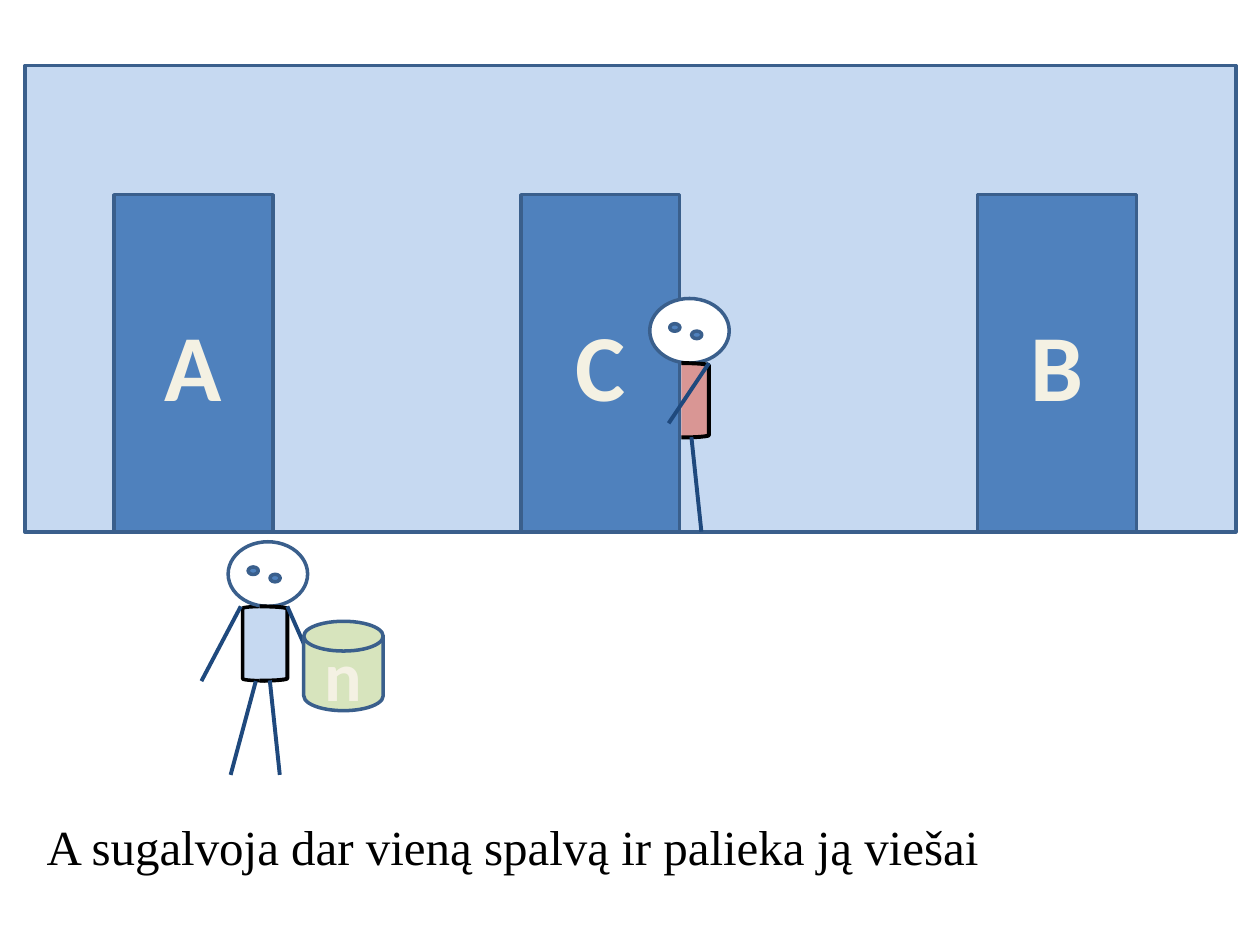
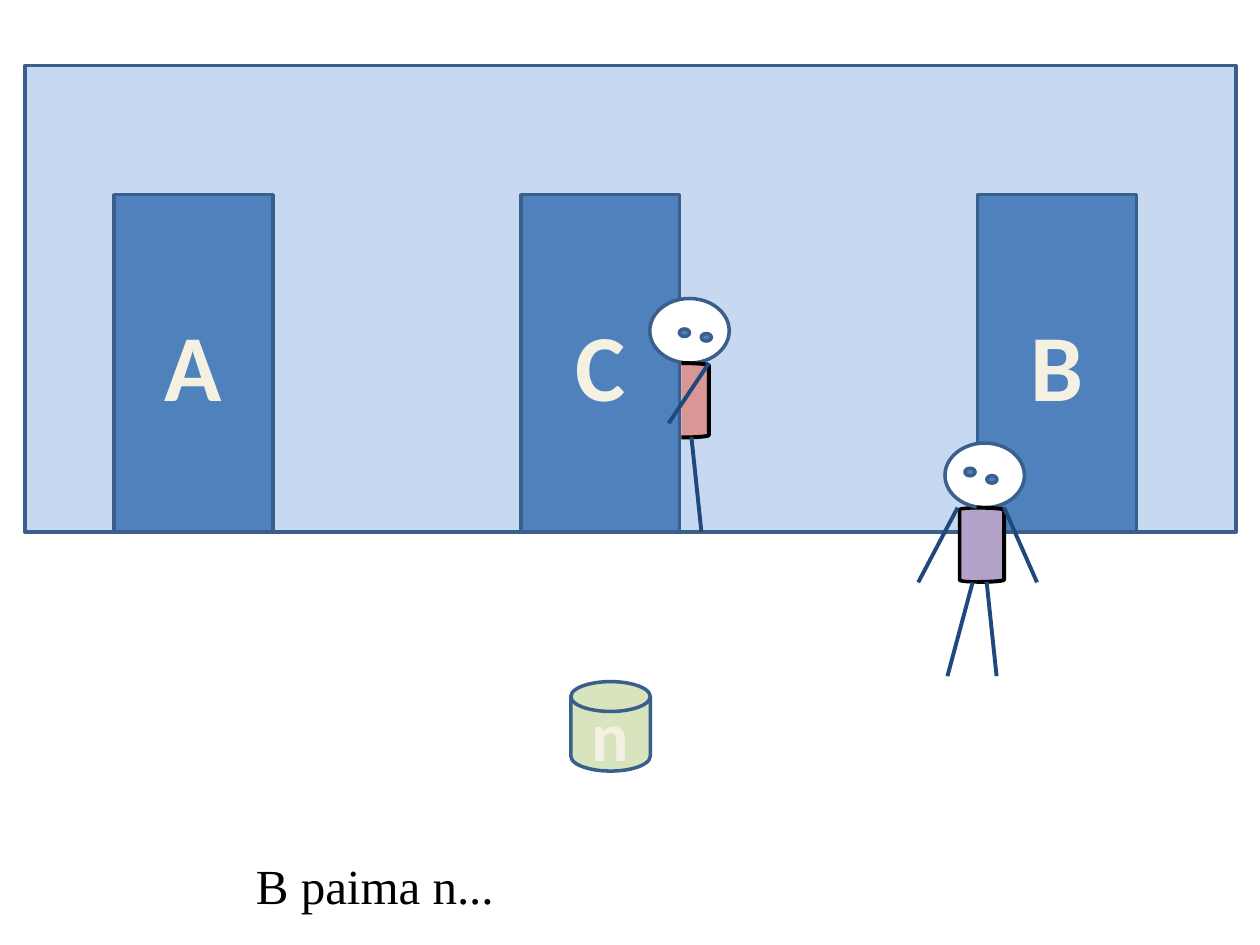
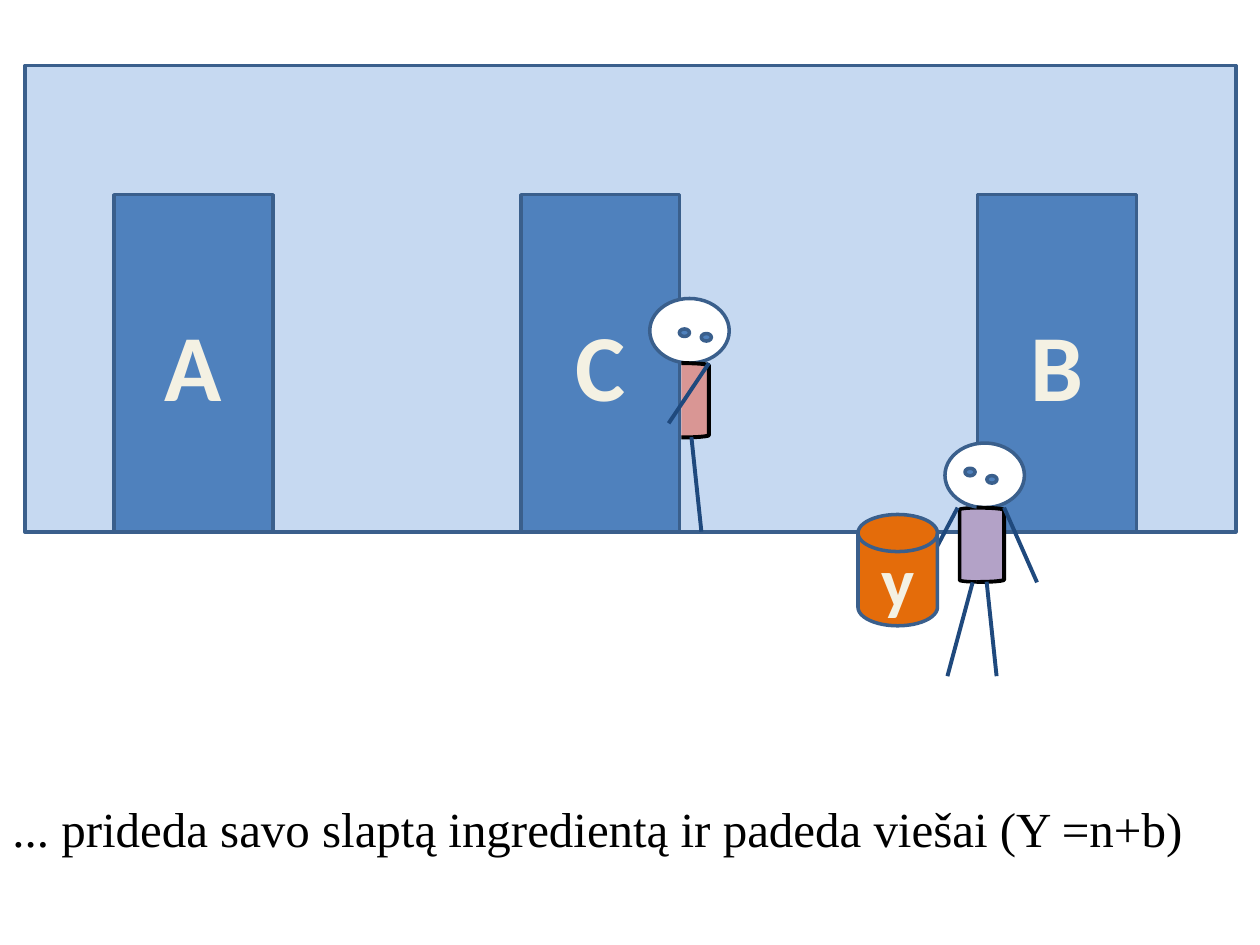
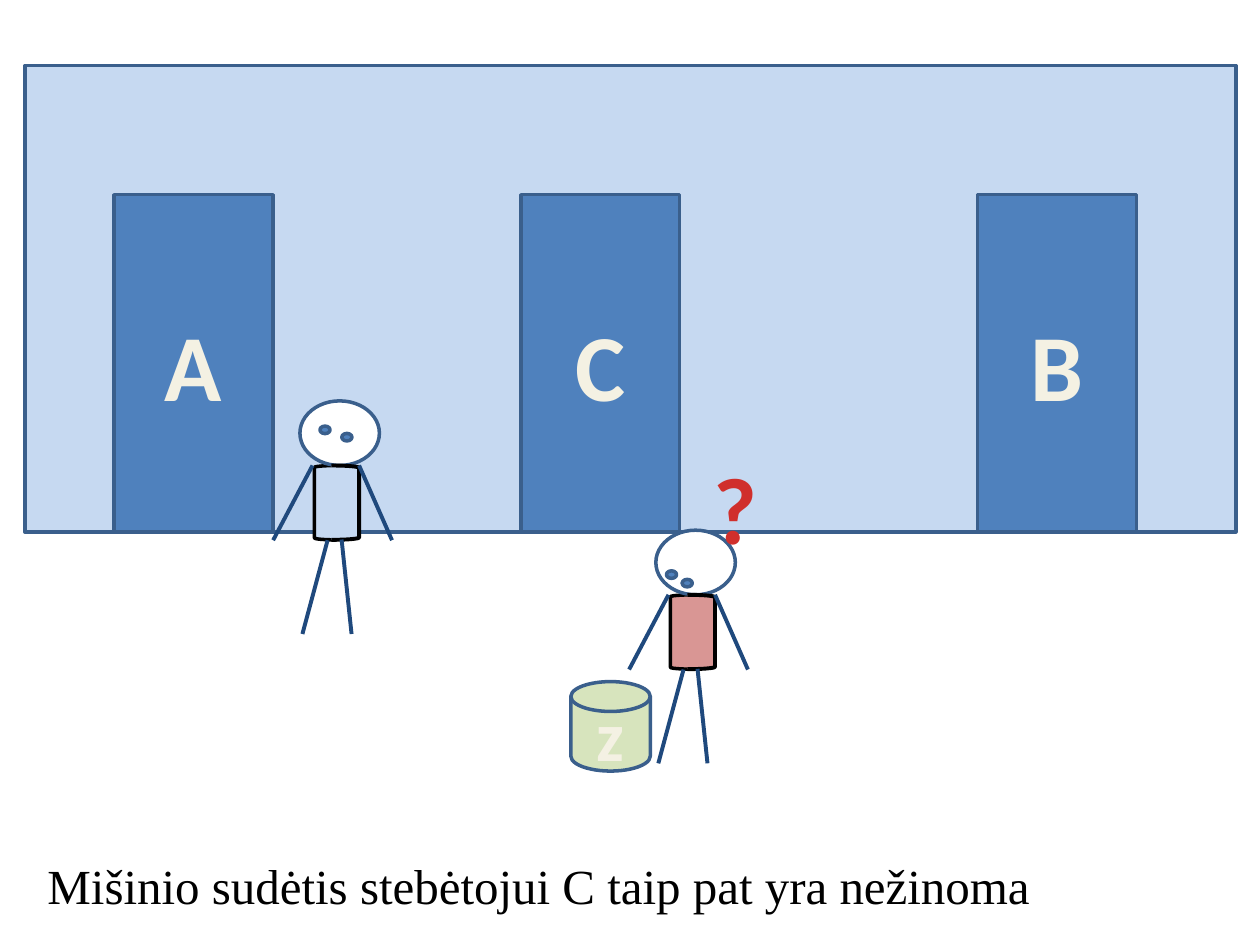
from dataclasses import dataclass

from lxml import etree
from pptx import Presentation
from pptx.dml.color import RGBColor
from pptx.enum.shapes import MSO_CONNECTOR, MSO_SHAPE
from pptx.enum.text import MSO_ANCHOR, MSO_AUTO_SIZE, PP_ALIGN
from pptx.oxml.ns import qn
from pptx.util import Pt

RECTANGLE = MSO_SHAPE.RECTANGLE
OVAL = MSO_SHAPE.OVAL
LEFT_BRACKET = MSO_SHAPE.LEFT_BRACKET
RIGHT_BRACKET = MSO_SHAPE.RIGHT_BRACKET
DISK = MSO_SHAPE.FLOWCHART_MAGNETIC_DISK
STRAIGHT = MSO_CONNECTOR.STRAIGHT
CENTER = PP_ALIGN.CENTER
LEFT = PP_ALIGN.LEFT
MIDDLE = MSO_ANCHOR.MIDDLE
FIT_SHAPE = MSO_AUTO_SIZE.SHAPE_TO_FIT_TEXT
BLANK_LAYOUT = 6


@dataclass(frozen=True)
class Theme:
    wall: str = "C6D9F1"
    door: str = "4F81BD"
    edge: str = "3A5F8C"
    limb: str = "1F497D"
    head: str = "FFFFFF"
    ink: str = "000000"
    label: str = "F4F1E3"
    label_outline: str = "054697"
    person_a: str = "C6D9F1"
    person_b: str = "B3A2C7"
    person_c: str = "D99694"
    green_paint: str = "D7E4BD"
    orange_paint: str = "E46C0A"
    question_stops: tuple = ((0, "FC7C7A"), (75, "D02F2C"), (100, "C70500"))
    label_font: str = "Calibri"
    caption_font: str = "Times New Roman"
    door_size: float = 54
    paint_size: float = 40
    caption_size: float = 28
    edge_width: float = 2
    limb_width: float = 2.25


# Door left edges, in drawing order
DOORS = {"A": 65.2, "B": 558.6, "C": 297.6}

# Places of body parts, measured from the top left of the head
HEAD_SIZE = (45.4, 36.9)
EYE_SIZE = (5.8, 4.3)
LEFT_SIDE = (8.3, 36.9, 13, 42.5)
RIGHT_SIDE = (18, 36.9, 15.8, 42.5)
RIGHT_LEG = (23.8, 79.2, 29.5, 133.2)
LEFT_LEG = (15.8, 79.6, 1.4, 133.2)
RIGHT_ARM = (33.8, 36.9, 52.6, 79.6)
LEFT_ARM = (7.2, 36.9, -15.3, 79.6)
PEEKING_ARM = (33.8, 36.9, 10.8, 71.3)
WHOLE_LIMBS = (RIGHT_LEG, RIGHT_ARM, LEFT_LEG, LEFT_ARM)
PEEKING_LIMBS = (RIGHT_LEG, PEEKING_ARM)

EYES_LEFT = ((11.4, 14.4), (23.9, 18.6))
EYES_RIGHT = ((16.9, 17.4), (29.4, 20))
EYES_DOWN = ((6, 23.2), (15, 28.1))

PEEKING_C = (371.3, 170.6)
B_AT_DOOR = (540, 253.2)
PUBLIC_PLACE = (326.2, 389.5)


def color(value):
    return RGBColor.from_string(value)


def add_solid_fill(parent, value):
    fill = etree.SubElement(parent, qn("a:solidFill"))
    etree.SubElement(fill, qn("a:srgbClr"), val=value)


class Scene:
    def __init__(self, presentation, theme):
        self.presentation = presentation
        self.theme = theme
        self.slide = None

    def start(self):
        """Open a new slide with the wall and its three doors."""
        layout = self.presentation.slide_layouts[BLANK_LAYOUT]
        self.slide = self.presentation.slides.add_slide(layout)
        self.shape(RECTANGLE, (14.2, 37.5, 692, 266.5), self.theme.wall)
        for letter, left in DOORS.items():
            door = self.shape(RECTANGLE, (left, 111.3, 90.8, 192.8), self.theme.door)
            self.label(door, letter, self.theme.door_size)

    def shape(self, kind, box, fill, line=None, width=None, parent=None):
        shapes = (parent or self.slide).shapes
        shape = shapes.add_shape(kind, *map(Pt, box))
        shape.shadow.inherit = False
        shape.fill.solid()
        shape.fill.fore_color.rgb = color(fill)
        shape.line.color.rgb = color(line or self.theme.edge)
        shape.line.width = Pt(width or self.theme.edge_width)
        return shape

    def set_text(self, shape, text, font_name, size, value, bold=False, align=LEFT):
        paragraph = shape.text_frame.paragraphs[0]
        paragraph.alignment = align
        font = paragraph.font
        font.name, font.size, font.bold = font_name, Pt(size), bold
        if value:
            font.color.rgb = color(value)
        run = paragraph.add_run()
        run.text = text
        return run

    def label(self, shape, text, size):
        """Put a bold, outlined letter in the middle of a shape."""
        theme = self.theme
        shape.text_frame.vertical_anchor = MIDDLE
        run = self.set_text(shape, text, theme.label_font, size, theme.label, True, CENTER)
        outline = etree.SubElement(run._r.get_or_add_rPr(), qn("a:ln"), w=str(Pt(1)))
        add_solid_fill(outline, theme.label_outline)

    def limb(self, parent, start, end):
        connector = parent.shapes.add_connector(STRAIGHT, *map(Pt, start + end))
        connector.line.color.rgb = color(self.theme.limb)
        connector.line.width = Pt(self.theme.limb_width)
        etree.SubElement(connector._element.spPr, qn("a:effectLst"))

    def person(self, place, fill, eyes=EYES_LEFT, peeking=False):
        """Draw a figure; a peeking one shows only its right side."""
        theme = self.theme
        left, top = place
        group = self.slide.shapes.add_group_shape()

        def part(kind, x, y, width, height, *style):
            self.shape(kind, (left + x, top + y, width, height), *style, parent=group)

        if not peeking:
            part(LEFT_BRACKET, *LEFT_SIDE, fill, theme.ink, theme.edge_width)
        part(OVAL, 0, 0, *HEAD_SIZE, theme.head)
        for eye in eyes:
            part(OVAL, *eye, *EYE_SIZE, theme.door)
        part(RIGHT_BRACKET, *RIGHT_SIDE, fill, theme.ink, theme.limb_width)
        for x1, y1, x2, y2 in PEEKING_LIMBS if peeking else WHOLE_LIMBS:
            self.limb(group, (left + x1, top + y1), (left + x2, top + y2))

    def paint(self, place, letter, fill, height=51.1):
        can = self.shape(DISK, (*place, 45.4, height), fill)
        self.label(can, letter, self.theme.paint_size)

    def text_box(self, box, wrap=True):
        text_box = self.slide.shapes.add_textbox(*map(Pt, box))
        text_box.text_frame.word_wrap = wrap
        text_box.text_frame.auto_size = FIT_SHAPE
        return text_box

    def caption(self, text, left, top, width):
        theme = self.theme
        self.set_text(self.text_box((left, top, width, 41.2)), text,
                      theme.caption_font, theme.caption_size, theme.ink)

    def question_mark(self, left, top):
        theme = self.theme
        text_box = self.text_box((left, top, 39.6, 72.7), wrap=False)
        run = self.set_text(text_box, "?", theme.label_font, theme.door_size,
                            None, True, CENTER)
        gradient = etree.SubElement(run._r.get_or_add_rPr(), qn("a:gradFill"))
        stops = etree.SubElement(gradient, qn("a:gsLst"))
        for percent, value in theme.question_stops:
            stop = etree.SubElement(stops, qn("a:gs"), pos=str(percent * 1000))
            etree.SubElement(stop, qn("a:srgbClr"), val=value)
        etree.SubElement(gradient, qn("a:lin"), ang=str(90 * 60000))


def main():
    presentation = Presentation()
    presentation.slide_width, presentation.slide_height = Pt(720), Pt(540)
    theme = Theme()
    scene = Scene(presentation, theme)

    scene.start()
    scene.person(PEEKING_C, theme.person_c, peeking=True)
    scene.person((130.4, 309.6), theme.person_a)
    scene.paint((173.6, 355), "n", theme.green_paint)
    scene.caption("A sugalvoja dar vieną spalvą ir palieka ją viešai", 19.6, 463, 680.4)

    scene.start()
    scene.paint(PUBLIC_PLACE, "n", theme.green_paint)
    scene.person(B_AT_DOOR, theme.person_b)
    scene.person(PEEKING_C, theme.person_c, EYES_RIGHT, peeking=True)
    scene.caption("B paima n...", 139.2, 485.2, 560.8)

    scene.start()
    scene.person(B_AT_DOOR, theme.person_b)
    scene.person(PEEKING_C, theme.person_c, EYES_RIGHT, peeking=True)
    scene.paint((490.3, 294), "y", theme.orange_paint, height=63.6)
    scene.caption("... prideda savo slaptą ingredientą ir padeda viešai (Y =n+b)",
                  0, 453, 711.4)

    scene.start()
    scene.paint(PUBLIC_PLACE, "z", theme.green_paint)
    scene.person((171.4, 229.1), theme.person_a)
    scene.person((374.8, 303), theme.person_c, EYES_DOWN)
    scene.question_mark(400.3, 253.4)
    scene.caption("Mišinio sudėtis stebėtojui C taip pat yra nežinoma", 20, 485.2, 680.4)

    presentation.save("out.pptx")


if __name__ == "__main__":
    main()
